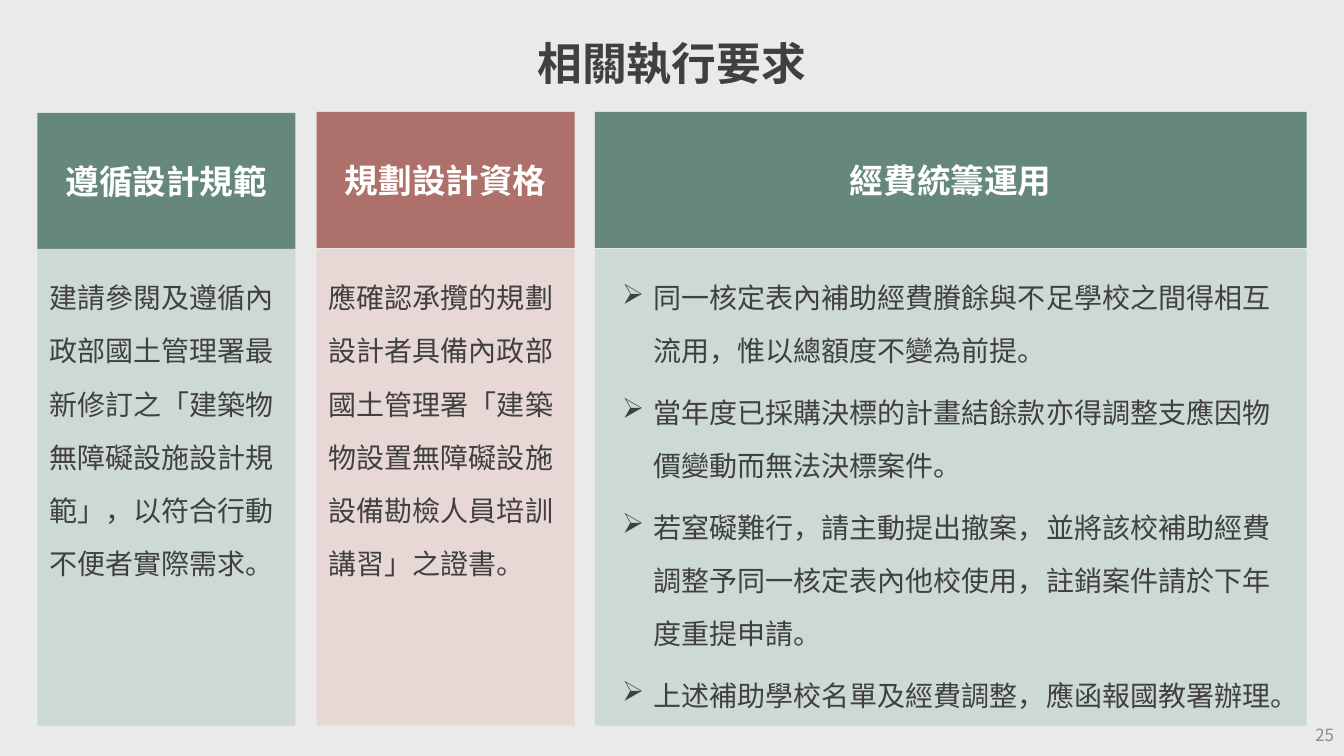
from pptx import Presentation
from pptx.dml.color import RGBColor
from pptx.enum.shapes import MSO_SHAPE
from pptx.enum.text import MSO_ANCHOR, PP_ALIGN
from pptx.oxml.ns import qn
from pptx.util import Inches, Pt
from lxml import etree

FONT = "Noto Sans CJK SC"
BACKGROUND = RGBColor(0xEA, 0xEA, 0xEA)
GREEN = RGBColor(0x66, 0x88, 0x7C)
PALE_GREEN = RGBColor(0xCD, 0xD9, 0xD5)
RED = RGBColor(0xAE, 0x70, 0x6A)
PALE_RED = RGBColor(0xE7, 0xD7, 0xD5)
WHITE = RGBColor(0xFF, 0xFF, 0xFF)
DARK = RGBColor(0x40, 0x40, 0x40)
GRAY = RGBColor(0x8C, 0x8C, 0x8C)
RECT = MSO_SHAPE.RECTANGLE
TOP, MIDDLE = MSO_ANCHOR.TOP, MSO_ANCHOR.MIDDLE
LEFT, CENTER, RIGHT = PP_ALIGN.LEFT, PP_ALIGN.CENTER, PP_ALIGN.RIGHT

TITLE_TEXT = {"size": Pt(32), "bold": True, "color": DARK}
HEAD_TEXT = {"size": Pt(24), "bold": True, "color": WHITE}
BODY_TEXT = {"size": Pt(20), "color": DARK}
NUMBER_TEXT = {"size": Pt(12), "color": GRAY}

HEAD_HEIGHT, BODY_TOP, BODY_HEIGHT = 1.35, 2.47, 4.73

# left, header top, width, side inset, header fill, body fill, heading, paragraphs
COLUMNS = [
    (0.37, 1.12, 2.56, 0.12, GREEN, PALE_GREEN, "遵循設計規範", [
        "建請參閱及遵循內政部國土管理署最新修訂之「建築物無障礙設施設計規範」，以符合行動不便者實際需求。",
    ]),
    (3.14, 1.11, 2.56, 0.12, RED, PALE_RED, "規劃設計資格", [
        "應確認承攬的規劃設計者具備內政部國土管理署「建築物設置無障礙設施設備勘檢人員培訓講習」之證書。",
    ]),
    (5.9, 1.11, 7.06, 0.2, GREEN, PALE_GREEN, "經費統籌運用", [
        "同一核定表內補助經費賸餘與不足學校之間得相互流用，惟以總額度不變為前提。",
        "當年度已採購決標的計畫結餘款亦得調整支應因物價變動而無法決標案件。",
        "若窒礙難行，請主動提出撤案，並將該校補助經費調整予同一核定表內他校使用，註銷案件請於下年度重提申請。",
        "上述補助學校名單及經費調整，應函報國教署辦理。",
    ]),
]


def write(sp, paragraphs, text_format, align, anchor):
    tf = sp.text_frame
    tf.word_wrap = True
    tf.vertical_anchor = anchor
    for i, text in enumerate(paragraphs):
        p = tf.add_paragraph() if i else tf.paragraphs[0]
        p.alignment = align
        r = p.add_run()
        r.text = text
        r.font.name = FONT
        for name, value in text_format.items():
            if name == "color":
                r.font.color.rgb = value
            else:
                setattr(r.font, name, value)
        # Chinese glyphs take the East Asian typeface
        etree.SubElement(r.font._element, qn("a:ea")).set("typeface", FONT)
    return tf


def add_panel(left, top, width, height, fill):
    sp = s.shapes.add_shape(RECT, Inches(left), Inches(top), Inches(width), Inches(height))
    sp.shadow.inherit = False
    sp.fill.solid()
    sp.fill.fore_color.rgb = fill
    sp.line.fill.background()
    return sp


prs = Presentation()
prs.slide_width, prs.slide_height = Inches(13.33), Inches(7.5)
s = prs.slides.add_slide(prs.slide_layouts[6])
s.background.fill.solid()
s.background.fill.fore_color.rgb = BACKGROUND

# Title
title = s.shapes.add_textbox(0, Inches(0.3), prs.slide_width, Inches(0.68))
write(title, ["相關執行要求"], TITLE_TEXT, CENTER, TOP)

# Three columns, each a header above a body
for left, top, width, inset, head_fill, body_fill, heading, paragraphs in COLUMNS:
    head = add_panel(left, top, width, HEAD_HEIGHT, head_fill)
    write(head, [heading], HEAD_TEXT, CENTER, MIDDLE)

    body = add_panel(left, BODY_TOP, width, BODY_HEIGHT, body_fill)
    tf = write(body, paragraphs, BODY_TEXT, LEFT, TOP)
    tf.margin_left = tf.margin_right = Inches(inset)
    tf.margin_top = tf.margin_bottom = Inches(0.12)
    for p in tf.paragraphs:
        p.line_spacing = Pt(38)
        if len(paragraphs) > 1:
            if p.text != paragraphs[-1]:
                p.space_after = Pt(6)
            pPr = p._p.get_or_add_pPr()
            pPr.set("marL", str(Inches(0.38)))
            pPr.set("indent", str(Inches(-0.31)))
            etree.SubElement(pPr, qn("a:buChar")).set("char", "➢")

# Slide number
number = s.shapes.add_textbox(Inches(10.33), Inches(7.09), Inches(3), Inches(0.4))
write(number, ["25"], NUMBER_TEXT, RIGHT, MIDDLE)

prs.save("out.pptx")
